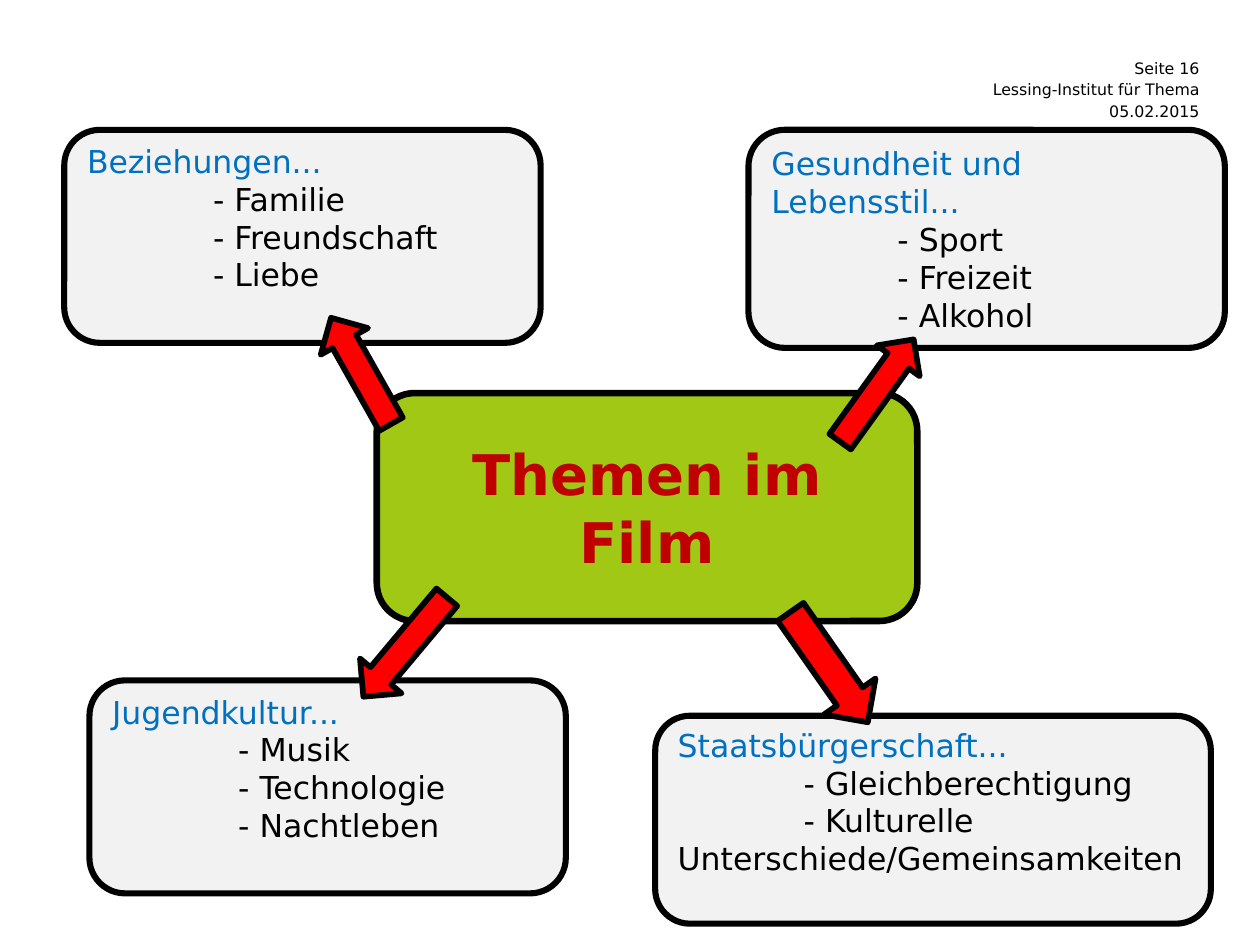
import pptx
import pptx.util
import pptx.dml.color
import pptx.enum.shapes
import pptx.enum.text

Pt = pptx.util.Pt
Kind = pptx.enum.shapes.MSO_SHAPE
Align = pptx.enum.text.PP_ALIGN
Anchor = pptx.enum.text.MSO_ANCHOR


def paint(text):
    return pptx.dml.color.RGBColor.from_string(text)


class Board:
    face = "DejaVu Sans"
    black = "000000"
    blue = "0070C0"
    grey = "F2F2F2"
    green = "A0C814"
    red = "FF0000"
    dark = "C00000"

    def __init__(self, slide):
        self.slide = slide

    def style(self, para, size, color, align=Align.LEFT, bold=False):
        para.alignment = align
        for run in para.runs:
            run.font.name = self.face
            run.font.size = Pt(size)
            run.font.bold = bold
            run.font.color.rgb = paint(color)

    def frame(self, shape, anchor, side, top):
        frame = shape.text_frame
        frame.word_wrap = True
        frame.vertical_anchor = anchor
        frame.margin_left = frame.margin_right = Pt(side)
        frame.margin_top = Pt(top)
        frame.margin_bottom = 0
        return frame

    def shape(self, kind, place, fill, width):
        shape = self.slide.shapes.add_shape(kind, *map(Pt, place))
        shape.shadow.inherit = False
        shape.fill.solid()
        shape.fill.fore_color.rgb = paint(fill)
        shape.line.color.rgb = paint(self.black)
        shape.line.width = Pt(width)
        return shape

    def label(self, text, place):
        box = self.slide.shapes.add_textbox(*map(Pt, place))
        frame = self.frame(box, Anchor.MIDDLE, 0, 0)
        frame.text = text
        self.style(frame.paragraphs[0], 9, self.black, Align.RIGHT)

    def center(self, text, place):
        shape = self.shape(Kind.ROUNDED_RECTANGLE, place, self.green, 3.75)
        frame = self.frame(shape, Anchor.MIDDLE, 10, 0)
        frame.text = text
        self.style(frame.paragraphs[0], 32, self.dark, Align.CENTER, True)

    def topic(self, head, items, place, top):
        shape = self.shape(Kind.ROUNDED_RECTANGLE, place, self.grey, 3.5)
        frame = self.frame(shape, Anchor.TOP, 7.2, top)
        frame.text = head
        self.style(frame.paragraphs[0], 18, self.blue)
        for item in items:
            para = frame.add_paragraph()
            para.text = "- " + item
            props = para._p.get_or_add_pPr()
            props.set("marL", "0")
            props.set("indent", str(Pt(72)))
            self.style(para, 18, self.black)

    def arrow(self, place, turn):
        shape = self.shape(Kind.UP_ARROW, place, self.red, 3.25)
        shape.rotation = turn


def main():
    deck = pptx.Presentation()
    deck.slide_width = Pt(720)
    deck.slide_height = Pt(540)
    board = Board(deck.slides.add_slide(deck.slide_layouts[6]))

    lines = ["Seite 16", "Lessing-Institut für Thema", "05.02.2015"]
    for row, text in enumerate(lines):
        board.label(text, (527, 33.1 + 12.24 * row, 158.4, 11.5))

    board.center("Themen im Film", (215.3, 224.6, 308.9, 130.3))

    topics = [
        ("Gesundheit und Lebensstil...", ["Sport", "Freizeit", "Alkohol"],
         (427.7, 74.2, 272.2, 124.6), 2.2),
        ("Jugendkultur...", ["Musik", "Technologie", "Nachtleben"],
         (51.1, 388.8, 272.2, 121.7), 1),
        ("Beziehungen...", ["Familie", "Freundschaft", "Liebe"],
         (36.7, 74.2, 272.2, 121.7), 1),
        ("Staatsbürgerschaft...",
         ["Gleichberechtigung", "Kulturelle Unterschiede/Gemeinsamkeiten"],
         (374.4, 409, 317.5, 118.8), 0),
    ]
    for topic in topics:
        board.topic(*topic)

    arrows = [
        ((486, 187.2, 30.2, 72), 35.7),
        ((190.8, 177.1, 31, 69.8), 330.6),
        ((216, 332.6, 31, 74.2), 220),
        ((455.8, 342.7, 36, 77), 145),
    ]
    for place, turn in arrows:
        board.arrow(place, turn)

    deck.save("out.pptx")


if __name__ == "__main__":
    main()
